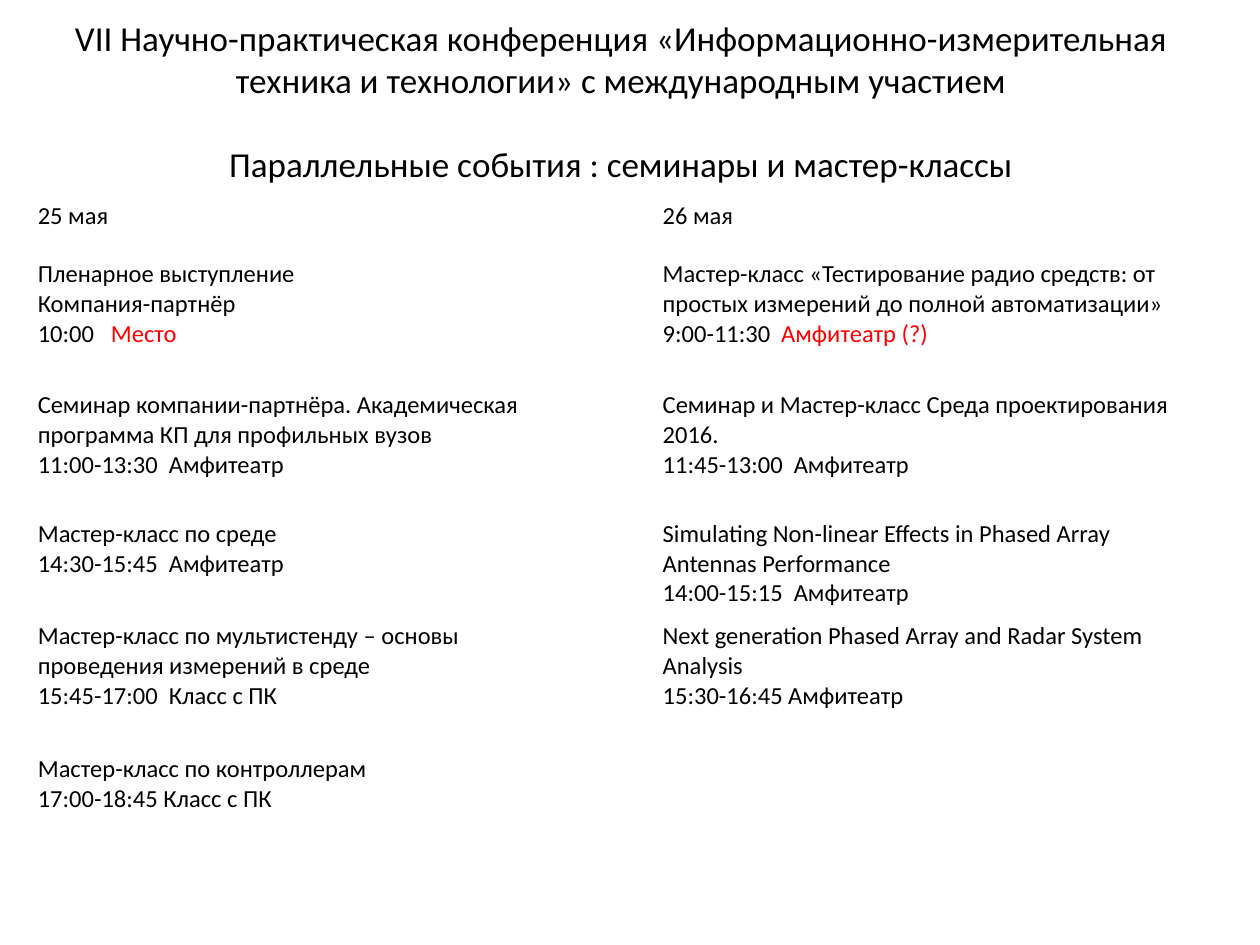
from lxml import etree
from pptx import Presentation
from pptx import util as u
from pptx.dml import color
from pptx.enum import text
from pptx.oxml import ns

BLACK = "000000"
RED = "FF0000"
TITLE = [
    "VII Научно-практическая конференция «Информационно-измерительная "
    "техника и технологии» с международным участием",
    "Параллельные события : семинары и мастер-классы",
]
COLUMN_WIDTHS = [4.57, 0.39, 4.49]
ROW_HEIGHTS = [0.46, 1.04, 1.02, 0.76, 1.06, 0.64]
PLACE_STOPS = {"10:00": 0.58, "9:00-11:30": 0.94}
USUAL_STOP = 1.04
UNCONFIRMED = ["Место", "Амфитеатр (?)"]
FIRST_DAY = [
    ["25 мая"],
    ["Пленарное выступление", "Компания-партнёр", "10:00\tМесто"],
    ["Семинар компании-партнёра. Академическая программа КП для профильных вузов",
     "11:00-13:30\tАмфитеатр"],
    ["Мастер-класс по среде", "14:30-15:45\tАмфитеатр"],
    ["Мастер-класс по мультистенду – основы проведения измерений в среде",
     "15:45-17:00\tКласс с ПК"],
    ["Мастер-класс по контроллерам", "17:00-18:45 Класс с ПК"],
]
SECOND_DAY = [
    ["26 мая"],
    ["Мастер-класс «Тестирование радио средств: от простых измерений до полной автоматизации»",
     "9:00-11:30\tАмфитеатр (?)"],
    ["Семинар и Мастер-класс Среда проектирования 2016.", "11:45-13:00\tАмфитеатр"],
    ["Simulating Non-linear Effects in Phased Array Antennas Performance",
     "14:00-15:15\tАмфитеатр"],
    ["Next generation Phased Array and Radar System Analysis", "15:30-16:45 Амфитеатр"],
    [],
]


def rgb(value):
    return color.RGBColor.from_string(value)


def add_words(paragraph, words, size, shade=BLACK):
    run = paragraph.add_run()
    run.text = words
    for name, value in {"name": "Calibri", "size": u.Pt(size)}.items():
        setattr(run.font, name, value)
    run.font.color.rgb = rgb(shade)


def set_tab_stop(paragraph, inches):
    properties = paragraph._p.get_or_add_pPr()
    stops = etree.SubElement(properties, ns.qn("a:tabLst"))
    etree.SubElement(stops, ns.qn("a:tab"), pos=str(u.Inches(inches)), algn="l")


def paragraphs(frame, count):
    return [frame.paragraphs[0] if i == 0 else frame.add_paragraph() for i in range(count)]


def fill_title(title):
    place = {"left": 0.43, "top": 0.21, "width": 9, "height": 1.18}
    for name, value in place.items():
        setattr(title, name, u.Inches(value))
    frame = title.text_frame
    settings = {
        "word_wrap": True,
        "auto_size": text.MSO_AUTO_SIZE.NONE,
        "vertical_anchor": text.MSO_ANCHOR.MIDDLE,
    }
    for name, value in settings.items():
        setattr(frame, name, value)
    for index, (paragraph, words) in enumerate(zip(paragraphs(frame, len(TITLE)), TITLE)):
        paragraph.alignment = text.PP_ALIGN.CENTER
        paragraph.space_before = u.Pt(24 * index)
        add_words(paragraph, words, 20)


def fill_event(cell, lines):
    for paragraph, line in zip(paragraphs(cell.text_frame, len(lines)), lines):
        time, tab, venue = line.partition("\t")
        if tab:
            set_tab_stop(paragraph, PLACE_STOPS.get(time, USUAL_STOP))
        add_words(paragraph, time + tab, 14)
        if venue:
            add_words(paragraph, venue, 14, RED if venue in UNCONFIRMED else BLACK)


def add_schedule(slide):
    schedule = slide.shapes.add_table(
        len(ROW_HEIGHTS), len(COLUMN_WIDTHS), u.Inches(0.2), u.Inches(1.55),
        u.Inches(sum(COLUMN_WIDTHS)), u.Inches(sum(ROW_HEIGHTS))).table
    schedule.first_row = False
    schedule.horz_banding = False
    for column, width in zip(schedule.columns, COLUMN_WIDTHS):
        column.width = u.Inches(width)
    for row, height in zip(schedule.rows, ROW_HEIGHTS):
        row.height = u.Inches(height)
    for cell in schedule.iter_cells():
        cell.fill.background()
    for column, events in ((0, FIRST_DAY), (2, SECOND_DAY)):
        for row, lines in enumerate(events):
            fill_event(schedule.cell(row, column), lines)


def main():
    deck = Presentation()
    deck.slide_width = u.Inches(10)
    deck.slide_height = u.Inches(7.5)
    slide = deck.slides.add_slide(deck.slide_layouts[5])
    fill_title(slide.shapes.title)
    add_schedule(slide)
    deck.save("out.pptx")


if __name__ == "__main__":
    main()
